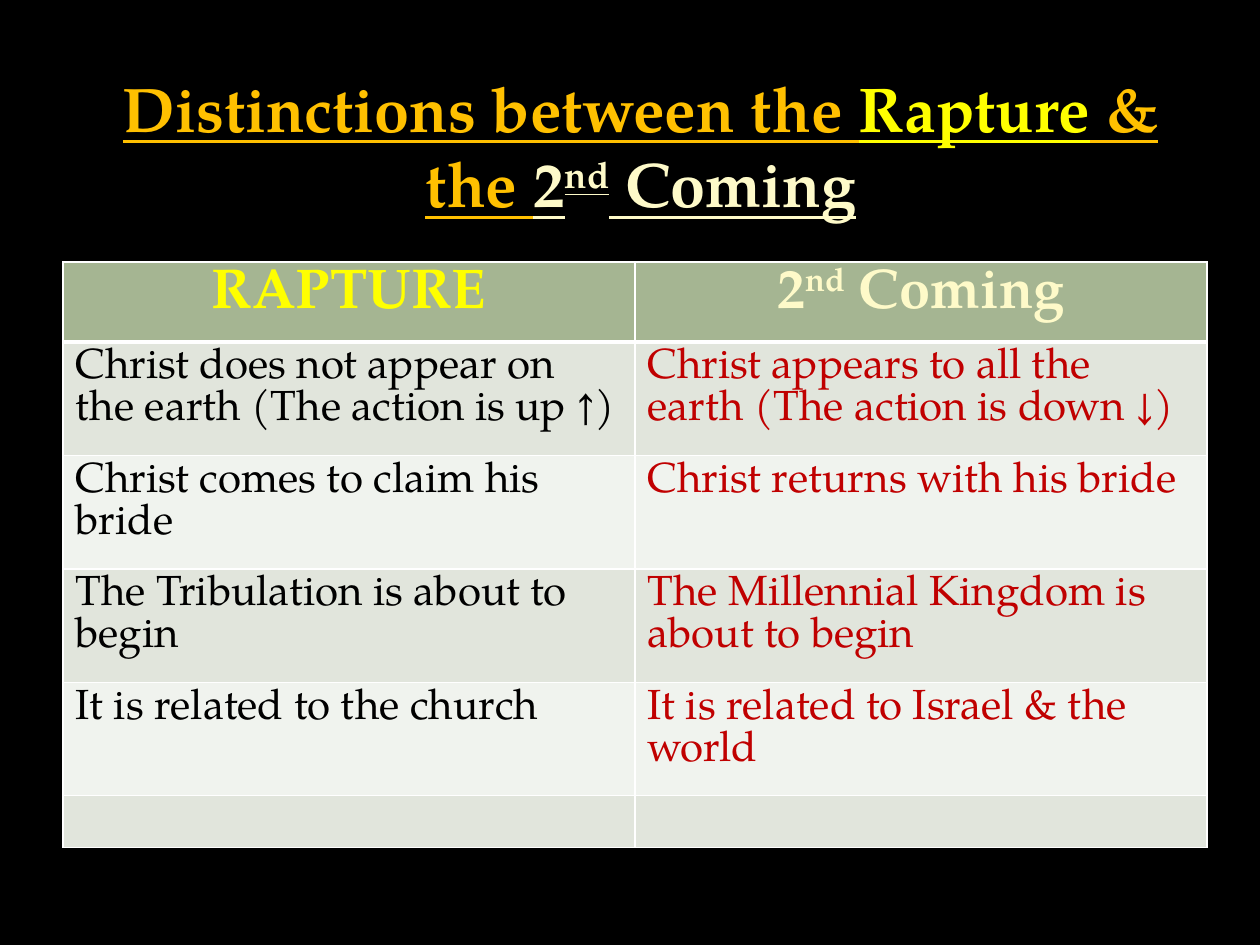
from dataclasses import dataclass

import pptx
import pptx.dml.color
import pptx.enum.text
import pptx.oxml
import pptx.oxml.ns
import pptx.util
from pptx.util import Inches


@dataclass(frozen=True)
class Theme:
    font: str = "TeX Gyre Pagella"
    title_size: int = 36
    header_size: int = 32
    body_size: int = 24
    background: str = "000000"
    orange: str = "FFC000"
    yellow: str = "FFFF00"
    cream: str = "FEFAC9"
    black: str = "000000"
    red: str = "C00000"
    border: str = "FFFFFF"
    header_fill: str = "A5B592"
    bands: tuple = ("E1E5DC", "F0F3EE")


CENTER = pptx.enum.text.PP_ALIGN.CENTER


def rgb(value):
    return pptx.dml.color.RGBColor.from_string(value)


class ComparisonPage:
    def __init__(self, deck, theme):
        self.theme = theme
        self.page = deck.slides.add_slide(deck.slide_layouts[6])
        fill = self.page.background.fill
        fill.solid()
        fill.fore_color.rgb = rgb(theme.background)

    def add_spans(self, para, spans, size, bold=False, underline=False):
        """Add (text, colour) spans; a third item gives the raise in percent."""
        for text, color, *raised in spans:
            span = para.add_run()
            span.text = text
            font = span.font
            font.name = self.theme.font
            font.size = pptx.util.Pt(size)
            font.bold = bold
            font.underline = underline
            font.color.rgb = rgb(color)
            if raised:
                span._r.get_or_add_rPr().set("baseline", str(raised[0] * 1000))

    def title(self, spans, left, top, width, height):
        box = self.page.shapes.add_textbox(left, top, width, height)
        frame = box.text_frame
        frame.word_wrap = True
        frame.auto_size = pptx.enum.text.MSO_AUTO_SIZE.SHAPE_TO_FIT_TEXT
        para = frame.paragraphs[0]
        para.alignment = CENTER
        self.add_spans(para, spans, self.theme.title_size, bold=True, underline=True)

    def border(self, cell, **widths):
        """Draw the cell's sides; widths are in points."""
        properties = cell._tc.get_or_add_tcPr()
        for index, side in enumerate("LRTB"):
            width = pptx.util.Pt(widths.get(side, 1))
            line = pptx.oxml.parse_xml(
                f'<a:ln{side} {pptx.oxml.ns.nsdecls("a")} w="{width}">'
                f'<a:solidFill><a:srgbClr val="{self.theme.border}"/></a:solidFill>'
                f'</a:ln{side}>'
            )
            properties.insert(index, line)

    def table(self, headers, rows, left, top, width, heights):
        theme = self.theme
        frame = self.page.shapes.add_table(
            len(heights), len(headers), left, top, width, sum(heights)
        )
        table = frame.table
        for row, height in zip(table.rows, heights):
            row.height = height
        for column, spans in enumerate(headers):
            cell = table.cell(0, column)
            para = cell.text_frame.paragraphs[0]
            para.alignment = CENTER
            self.add_spans(para, spans, theme.header_size, bold=True)
            self.finish_cell(cell, theme.header_fill, B=3)
        for number, texts in enumerate(rows, 1):
            for column, (text, color) in enumerate(zip(texts, (theme.black, theme.red))):
                cell = table.cell(number, column)
                if text:
                    para = cell.text_frame.paragraphs[0]
                    self.add_spans(para, [(text, color)], theme.body_size)
                fill = theme.bands[(number - 1) % 2]
                self.finish_cell(cell, fill, T=3 if number == 1 else 1)

    def finish_cell(self, cell, color, **widths):
        cell.fill.solid()
        cell.fill.fore_color.rgb = rgb(color)
        self.border(cell, **widths)


def main():
    theme = Theme()
    deck = pptx.Presentation()
    deck.slide_width, deck.slide_height = Inches(10), Inches(7.5)
    page = ComparisonPage(deck, theme)

    second_coming = [("2", theme.cream), ("nd", theme.cream, 30), (" Coming", theme.cream)]
    page.title(
        [
            ("Distinctions between the ", theme.orange),
            ("Rapture", theme.yellow),
            (" & the ", theme.orange),
            *second_coming,
        ],
        Inches(0.75), Inches(0.5), Inches(8.67), Inches(1.31),
    )

    rows = [
        ("Christ does not appear on the earth (The action is up ↑)",
         "Christ appears to all the earth (The action is down ↓)"),
        ("Christ comes to claim his bride", "Christ returns with his bride"),
        ("The Tribulation is about to begin", "The Millennial Kingdom is about to begin"),
        ("It is related to the church", "It is related to Israel & the world"),
        ("", ""),
    ]
    heights = [Inches(0.63)] + [Inches(0.9)] * 4 + [Inches(0.41)]
    page.table(
        [[("RAPTURE", theme.yellow)], second_coming],
        rows, Inches(0.5), Inches(2.08), Inches(9.08), heights,
    )
    deck.save("out.pptx")


if __name__ == "__main__":
    main()
